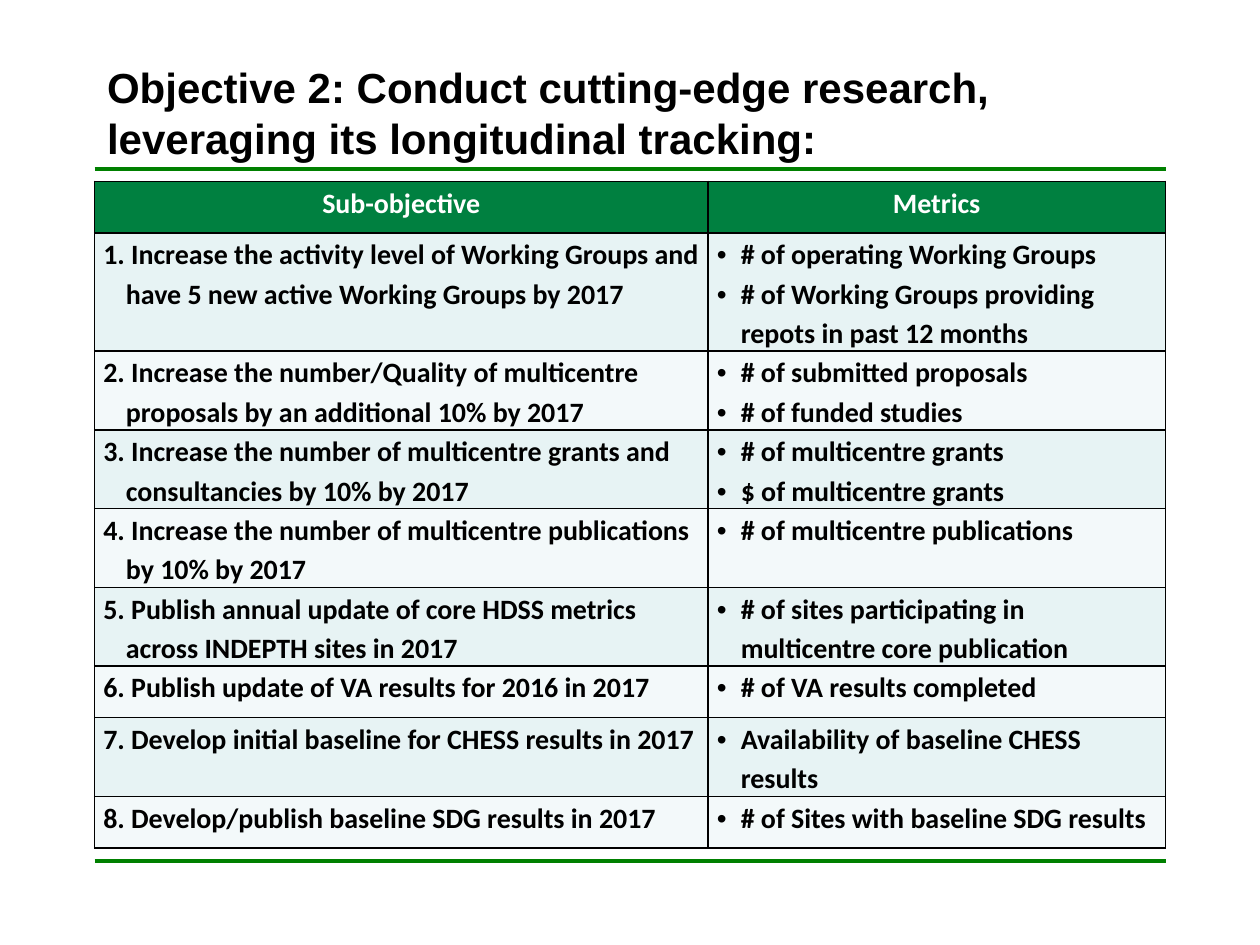
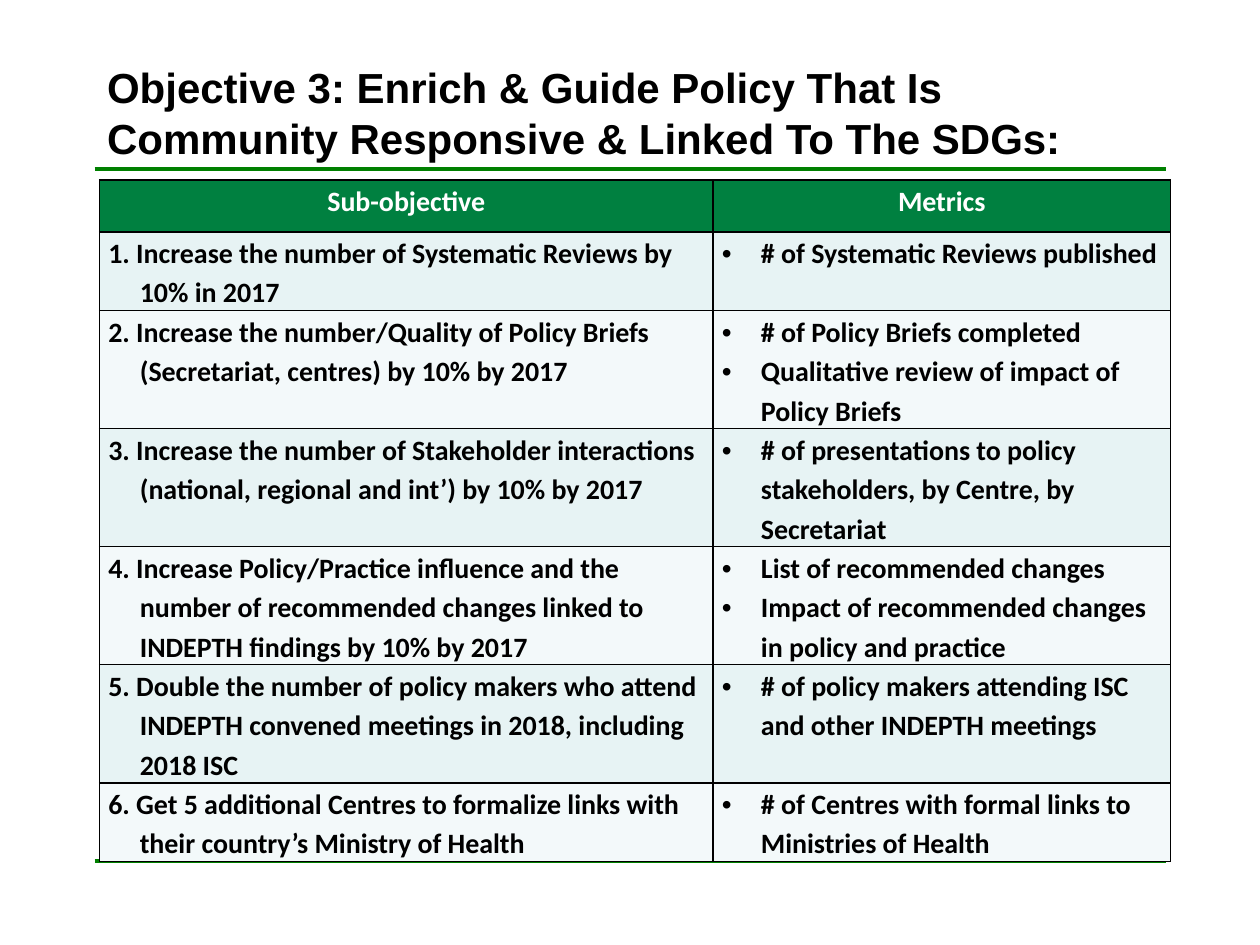
from lxml import etree
from pptx import Presentation, util as u
from pptx.dml.color import RGBColor
from pptx.enum import shapes, text
from pptx.oxml import ns

PX = 9144
LEFT, WIDTH = 75, 850
RULES = (683, 134)
COLS = (487, 363)
ROW = 41
HEADS = ("Sub-objective", "Metrics")

SLIDES = [
    dict(
        title="Objective 2: Conduct cutting-edge research, leveraging its longitudinal tracking:",
        box=(75, 144, 520), indents=(18, 19),
        rows=[
            ("Increase the activity level of Working Groups and have 5 new active Working Groups by 2017",
             ["# of operating Working Groups",
              "# of Working Groups providing repots in past 12 months"]),
            ("Increase the number/Quality of multicentre proposals by an additional 10% by 2017",
             ["# of submitted proposals", "# of funded studies"]),
            ("Increase the number of multicentre grants and consultancies by 10% by 2017",
             ["# of multicentre grants", "$ of multicentre grants"]),
            ("Increase the number of multicentre publications by 10% by 2017",
             ["# of multicentre publications"]),
            ("Publish annual update of core HDSS metrics across INDEPTH sites in 2017",
             ["# of sites participating in multicentre core publication"]),
            ("Publish update of VA results for 2016 in 2017",
             ["# of VA results completed"]),
            ("Develop initial baseline for CHESS results in 2017",
             ["Availability of baseline CHESS results"]),
            ("Develop/publish baseline SDG results in 2017",
             ["# of Sites with baseline SDG results"]),
        ]),
    dict(
        title="Objective 3: Enrich & Guide Policy That Is Community Responsive & Linked To The SDGs:",
        box=(79, 143, 531), indents=(25, 31),
        rows=[
            ("Increase the number of Systematic Reviews by 10% in 2017",
             ["# of Systematic Reviews published"]),
            ("Increase the number/Quality of Policy Briefs (Secretariat, centres) by 10% by 2017",
             ["# of Policy Briefs completed",
              "Qualitative review of impact of Policy Briefs"]),
            ("Increase the number of Stakeholder interactions (national, regional and int’) by 10% by 2017",
             ["# of presentations to policy stakeholders, by Centre, by Secretariat"]),
            ("Increase Policy/Practice influence and the number of recommended changes linked to "
             "INDEPTH findings by 10% by 2017",
             ["List of recommended changes",
              "Impact of recommended changes in policy and practice"]),
            ("Double the number of policy makers who attend INDEPTH convened meetings in 2018, "
             "including 2018 ISC",
             ["# of policy makers attending ISC and other INDEPTH meetings"]),
            ("Get 5 additional Centres to formalize links with their country’s Ministry of Health",
             ["# of Centres with formal links to Ministries of Health"]),
        ]),
]


def px(n):
    return u.Emu(n * PX)


def rgb(value):
    return RGBColor.from_string(value)


def sub(parent, tag, **attrs):
    return etree.SubElement(parent, ns.qn(tag), attrs)


def write(p, words, font="Calibri", size=16, color="000000", align=None,
          spacing=None, indent=0, bullet=False):
    p.alignment = align
    p.line_spacing = spacing
    pPr = p._p.get_or_add_pPr()
    pPr.set("marL", str(px(indent)))
    pPr.set("indent", str(-px(indent)))
    if bullet:
        sub(pPr, "a:buFont", typeface="Arial")
        sub(pPr, "a:buChar", char="•")
    r = p.add_run()
    r.text = words
    r.font.name, r.font.size, r.font.bold = font, u.Pt(size), True
    r.font.color.rgb = rgb(color)


class Deck:
    ink, rule, head = "000000", "008000", "008040"
    bands = ("E7F3F4", "F3F9FA")

    def __init__(self):
        self.prs = Presentation()
        self.prs.slide_width, self.prs.slide_height = px(1000), px(750)

    def slide(self, title):
        self.s = self.prs.slides.add_slide(self.prs.slide_layouts[5])
        for y in RULES:
            self.line(y)
        self.title(title)

    def line(self, y):
        c = self.s.shapes.add_connector(
            shapes.MSO_CONNECTOR.STRAIGHT, px(LEFT), px(y), px(LEFT + WIDTH), px(y))
        c.line.color.rgb = rgb(self.rule)
        c.line.width = u.Pt(2.25)
        sub(c._element.spPr, "a:effectLst")

    def title(self, words):
        sp = self.s.shapes.title
        sp.left, sp.top, sp.width, sp.height = px(LEFT), px(42), px(WIDTH), px(92)
        tf = sp.text_frame
        tf.auto_size = text.MSO_AUTO_SIZE.NONE
        tf.vertical_anchor = text.MSO_ANCHOR.BOTTOM
        write(tf.paragraphs[0], words, font="Arial", size=24, color=self.ink,
              align=text.PP_ALIGN.LEFT)

    def cell(self, cell, lines, fill, **fmt):
        cell.margin_left = cell.margin_right = px(7)
        cell.margin_top = cell.margin_bottom = 0
        tcPr = cell._tc.get_or_add_tcPr()
        for side in "LRTB":
            ln = sub(tcPr, f"a:ln{side}", w=str(u.Pt(1)))
            sub(sub(ln, "a:solidFill"), "a:srgbClr", val=self.ink)
        cell.fill.solid()
        cell.fill.fore_color.rgb = rgb(fill)
        tf = cell.text_frame
        for i, words in enumerate(lines):
            p = tf.add_paragraph() if i else tf.paragraphs[0]
            write(p, words, spacing=1.15, **fmt)

    def table(self, rows, box, indents):
        left, top, height = box
        tbl = self.s.shapes.add_table(
            len(rows) + 1, len(COLS), px(left), px(top), px(WIDTH), px(height)).table
        for col, width in zip(tbl.columns, COLS):
            col.width = px(width)
        for row in tbl.rows:
            row.height = px(ROW)
        for j, words in enumerate(HEADS):
            self.cell(tbl.cell(0, j), [words], self.head, color="FFFFFF",
                      align=text.PP_ALIGN.CENTER)
        for i, (goal, metrics) in enumerate(rows, 1):
            fill = self.bands[(i - 1) % 2]
            self.cell(tbl.cell(i, 0), [f"{i}. {goal}"], fill, indent=indents[0])
            self.cell(tbl.cell(i, 1), metrics, fill, indent=indents[1], bullet=True)


def main():
    deck = Deck()
    for page in SLIDES:
        deck.slide(page["title"])
        deck.table(page["rows"], page["box"], page["indents"])
    deck.prs.save("out.pptx")


if __name__ == "__main__":
    main()
